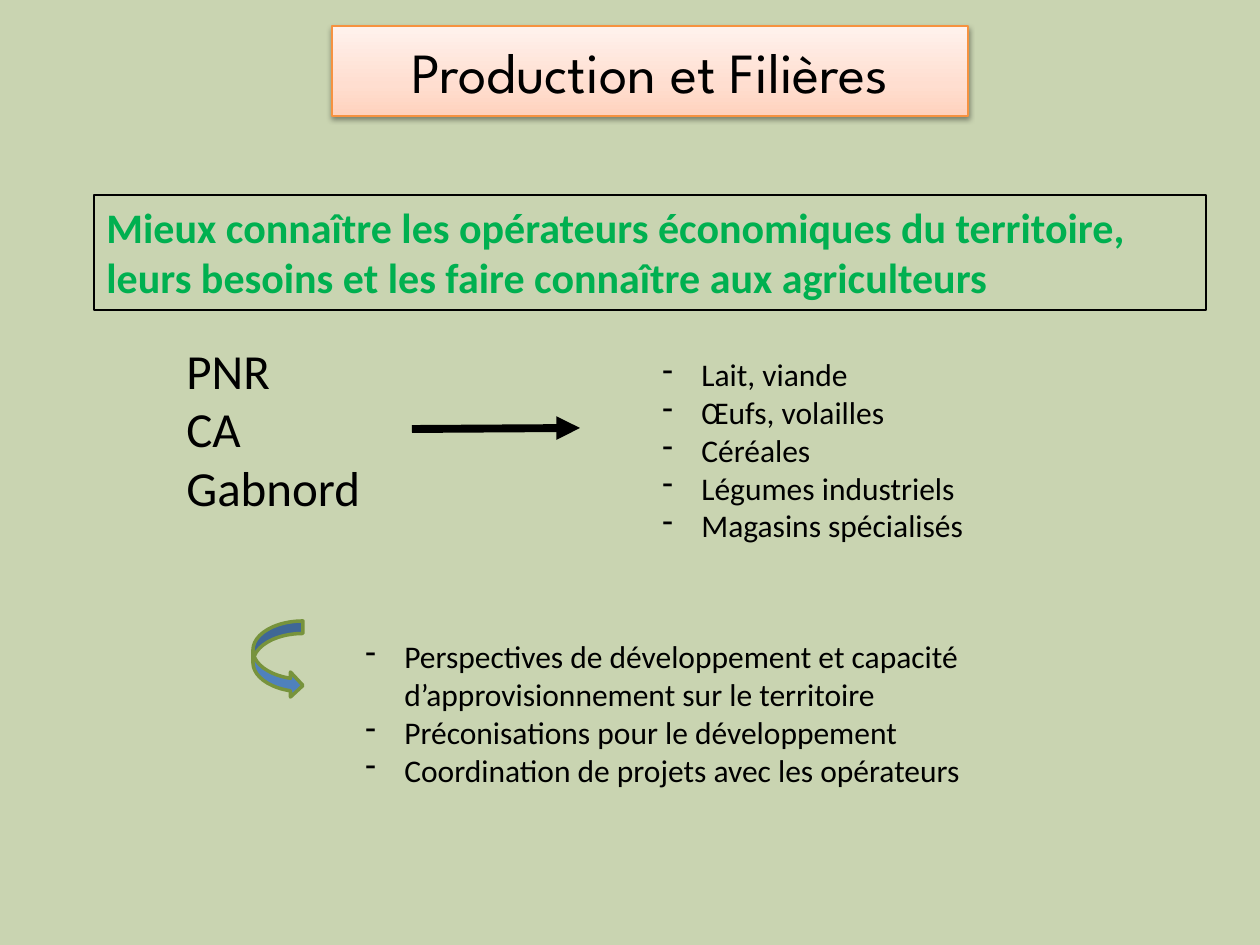
from copy import deepcopy

from lxml import etree
from pptx import Presentation
from pptx.dml.color import RGBColor
from pptx.enum.shapes import MSO_CONNECTOR, MSO_SHAPE
from pptx.enum.text import MSO_ANCHOR, PP_ALIGN
from pptx.oxml.ns import qn
from pptx.util import Emu, Pt

PX = 914400 / 126
RECT = MSO_SHAPE.RECTANGLE
CURVED_ARROW = MSO_SHAPE.CURVED_RIGHT_ARROW
STRAIGHT = MSO_CONNECTOR.STRAIGHT
MIDDLE, TOP = MSO_ANCHOR.MIDDLE, MSO_ANCHOR.TOP
CENTER, LEFT = PP_ALIGN.CENTER, PP_ALIGN.LEFT
COLORS = {
    "background": "C9D4B1",
    "text": "000000",
    "goal": "00B050",
    "title_line": "F69240",
    "arrow_fill": "4F81BD",
    "arrow_line": "77933C",
}
TITLE_STOPS = [(0, "FFD2BD"), (0.35, "FFDED0"), (1, "FFF2ED")]
BODY = {"name": "Calibri", "size": Pt(18)}
PARTNERS = {"name": "Calibri", "size": Pt(28)}
GOAL = {"name": "Calibri", "size": Pt(24), "bold": True}
TITLE = {"name": "League Spartan", "size": Pt(32.4)}


def px(*values):
    return [Emu(round(v * PX)) for v in values]


def rgb(name):
    return RGBColor.from_string(COLORS[name])


def add_xml(parent, tag, **attrs):
    return etree.SubElement(parent, qn(tag), attrs)


def outline(shape, color, width):
    shape.line.color.rgb = rgb(color)
    shape.line.width = Pt(width)


def write(shape, lines, font, color="text", align=LEFT, anchor=TOP, dashed=False):
    tf = shape.text_frame
    tf.word_wrap = True
    tf.vertical_anchor = anchor
    for i, line in enumerate(lines):
        p = tf.add_paragraph() if i else tf.paragraphs[0]
        p.alignment = align
        if dashed:
            pPr = p._p.get_or_add_pPr()
            indent = px(39)[0]
            pPr.set("marL", str(indent))
            pPr.set("indent", str(-indent))
            add_xml(pPr, "a:buChar", char="-")
        r = p.add_run()
        r.text = line
        for key, value in font.items():
            setattr(r.font, key, value)
        r.font.color.rgb = rgb(color)


def add_title(s, box, text):
    sp = s.shapes.add_shape(RECT, *px(*box))
    sp.fill.gradient()
    sp.fill.gradient_angle = 90
    first = sp.fill.gradient_stops[0]._gs
    first.addnext(deepcopy(first))
    for stop, (position, color) in zip(sp.fill.gradient_stops, TITLE_STOPS):
        stop.position = position
        stop.color.rgb = RGBColor.from_string(color)
    outline(sp, "title_line", 0.75)
    sp.shadow.inherit = False
    effects = sp._element.spPr.find(qn("a:effectLst"))
    shadow = add_xml(effects, "a:outerShdw", blurRad=str(Pt(3.1)),
                     dist=str(Pt(1.6)), dir="5400000", rotWithShape="0")
    black = add_xml(shadow, "a:srgbClr", val=COLORS["text"])
    add_xml(black, "a:alpha", val="38000")
    write(sp, [text], TITLE, align=CENTER, anchor=MIDDLE)


def add_goal(s, box, text):
    sp = s.shapes.add_shape(RECT, *px(*box))
    sp.fill.background()
    outline(sp, "text", 0.75)
    sp.shadow.inherit = False
    write(sp, [text], GOAL, color="goal")


def add_list(s, box, lines, font=BODY, dashed=True):
    write(s.shapes.add_textbox(*px(*box)), lines, font, dashed=dashed)


def add_curved_arrow(s, box):
    sp = s.shapes.add_shape(CURVED_ARROW, *px(*box))
    sp.fill.solid()
    sp.fill.fore_color.rgb = rgb("arrow_fill")
    outline(sp, "arrow_line", 2)
    sp.shadow.inherit = False


def add_arrow(s, start, end):
    arrow = s.shapes.add_connector(STRAIGHT, *px(*start, *end))
    outline(arrow, "text", 4.5)
    add_xml(arrow.line._get_or_add_ln(), "a:tailEnd", type="triangle")
    add_xml(arrow._element.spPr, "a:effectLst")


def main():
    prs = Presentation()
    prs.slide_width, prs.slide_height = px(1260, 945)
    s = prs.slides.add_slide(prs.slide_layouts[6])
    s.background.fill.solid()
    s.background.fill.fore_color.rgb = rgb("background")

    add_title(s, (332, 26, 636, 90), "Production et Filières")
    add_list(s, (174, 334, 282, 190), ["PNR", "CA", "Gabnord"], PARTNERS, False)
    add_goal(s, (94, 195, 1112, 115),
             "Mieux connaître les opérateurs économiques du territoire, "
             "leurs besoins et les faire connaître aux agriculteurs")
    add_list(s, (353, 631, 655, 204), [
        "Perspectives de développement et capacité "
        "d’approvisionnement sur le territoire",
        "Préconisations pour le développement",
        "Coordination de projets avec les opérateurs",
    ])
    add_list(s, (650, 349, 397, 242), [
        "Lait, viande",
        "Œufs, volailles",
        "Céréales",
        "Légumes industriels",
        "Magasins spécialisés",
    ])
    add_curved_arrow(s, (253, 621, 50, 77))
    add_arrow(s, (412, 429), (580, 428))
    prs.save("out.pptx")


if __name__ == "__main__":
    main()
